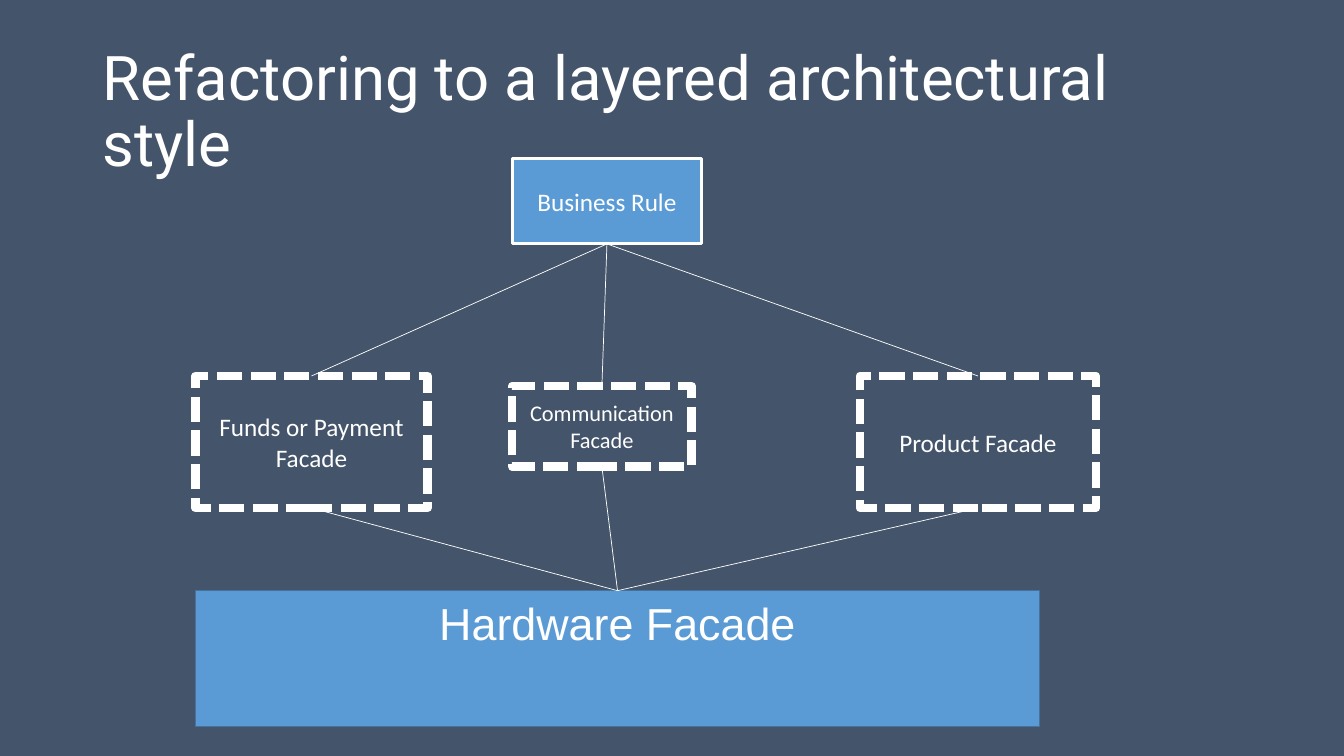
from collections import namedtuple
from dataclasses import dataclass

from lxml import etree
from pptx import Presentation
from pptx import util as u
from pptx.dml.color import RGBColor
from pptx.enum import dml, shapes, text
from pptx.oxml.ns import qn

CELL = u.Inches(0.1)  # side of one square of the layout grid

Box = namedtuple("Box", "left top width height")  # columns and rows of the grid


@dataclass(frozen=True)
class Theme:
    background: RGBColor = RGBColor.from_string("44546A")
    light: RGBColor = RGBColor.from_string("FFFFFF")
    accent: RGBColor = RGBColor.from_string("5B9BD5")
    accent_edge: RGBColor = RGBColor.from_string("43739E")
    title_font: str = "Roboto"
    body_font: str = "Calibri"
    base_font: str = "Arial"
    title_size: float = 44
    base_size: float = 32
    body_size: float = 18
    small_size: float = 16
    dashed_edge: float = 6
    solid_edge: float = 2.25
    base_edge: float = 1
    link: float = 0.5


THEME = Theme()


def on_grid(box):
    return [round(length * CELL) for length in box]


def write(frame, words, font, size, align, anchor):
    frame.word_wrap = True
    frame.auto_size = text.MSO_AUTO_SIZE.NONE
    frame.vertical_anchor = anchor
    para = frame.paragraphs[0]
    para.text = words
    para.alignment = align
    para.font.name = font
    para.font.size = u.Pt(size)
    para.font.color.rgb = THEME.light
    return para


def add_title(page, box, words):
    title = page.shapes.title
    title.left, title.top, title.width, title.height = on_grid(box)
    para = write(title.text_frame, words, THEME.title_font, THEME.title_size,
                 text.PP_ALIGN.LEFT, text.MSO_ANCHOR.MIDDLE)
    para.line_spacing = 0.9


def add_block(page, box, words, edge, edge_width, fill=None, dash=None,
              font=THEME.body_font, size=THEME.body_size,
              anchor=text.MSO_ANCHOR.MIDDLE):
    block = page.shapes.add_shape(shapes.MSO_SHAPE.RECTANGLE, *on_grid(box))
    block.shadow.inherit = False
    if fill is None:
        block.fill.background()
    else:
        block.fill.solid()
        block.fill.fore_color.rgb = fill
    block.line.color.rgb = edge
    block.line.width = u.Pt(edge_width)
    if dash is not None:
        block.line.dash_style = dash
    write(block.text_frame, words, font, size, text.PP_ALIGN.CENTER, anchor)
    return block


def link_down(page, upper, lower):
    """Join the bottom of the upper block to the top of the lower one."""
    link = page.shapes.add_connector(shapes.MSO_CONNECTOR.STRAIGHT, 0, 0, 0, 0)
    link.begin_connect(upper, 2)
    link.end_connect(lower, 0)
    link.line.color.rgb = THEME.light
    link.line.width = u.Pt(THEME.link)
    etree.SubElement(link._element.spPr, qn("a:effectLst"))


def add_layers(page, area):
    """Place the rule, the facades and the hardware layer inside the area."""
    def place(left, top, width, height):
        return Box(area.left + left, area.top + top, width, height)

    facades = [
        add_block(page, place(*box), words, THEME.light, THEME.dashed_edge,
                  dash=dml.MSO_LINE.SQUARE_DOT, size=size)
        for words, size, box in (
            ("Communication Facade", THEME.small_size, (31.4, 22.6, 17.8, 8)),
            ("Funds or Payment Facade", THEME.body_size, (0, 21.6, 23, 13.1)),
            ("Product Facade", THEME.body_size, (65.9, 21.6, 23.4, 13.1)),
        )
    ]
    rule = add_block(page, place(31.4, 0, 18.8, 8.5), "Business Rule",
                     THEME.light, THEME.solid_edge, THEME.accent)
    hardware = add_block(page, place(0, 42.9, 83.7, 13.5), "Hardware Facade",
                         THEME.accent_edge, THEME.base_edge, THEME.accent,
                         font=THEME.base_font, size=THEME.base_size,
                         anchor=text.MSO_ANCHOR.TOP)
    for facade in facades:
        link_down(page, rule, facade)
        link_down(page, facade, hardware)


def main():
    deck = Presentation()
    deck.slide_width, deck.slide_height = u.Inches(13.33), u.Inches(7.5)
    page = deck.slides.add_slide(deck.slide_layouts[5])
    page.background.fill.solid()
    page.background.fill.fore_color.rgb = THEME.background
    add_title(page, Box(9.2, 4, 115, 14.5),
              "Refactoring to a layered architectural style")
    add_layers(page, Box(19.4, 15.7, 89.3, 56.4))
    deck.save("out.pptx")


if __name__ == "__main__":
    main()
